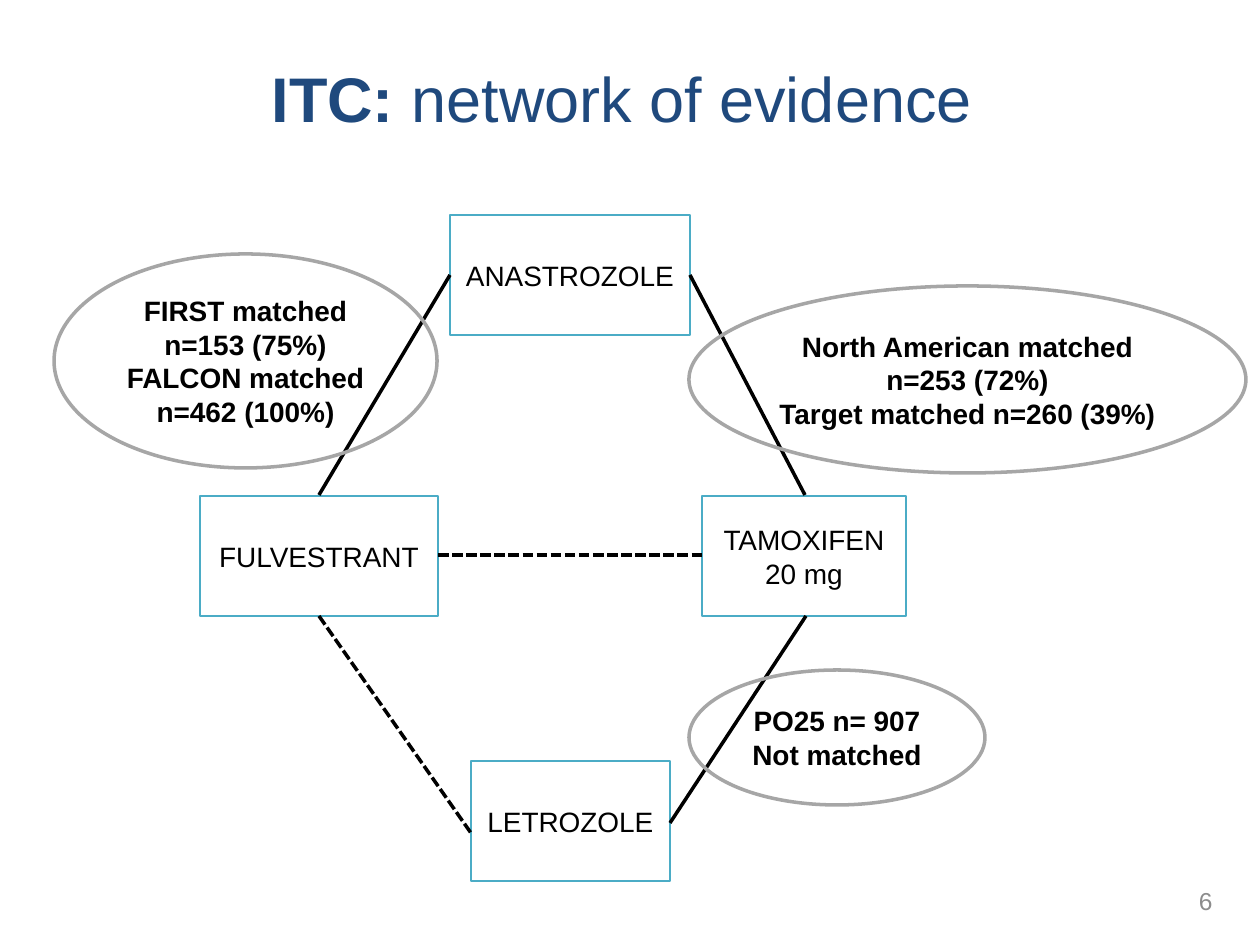
from dataclasses import dataclass

from lxml import etree
from pptx import Presentation
from pptx.dml.color import RGBColor
from pptx.enum.dml import MSO_LINE
from pptx.enum.shapes import MSO_CONNECTOR, MSO_SHAPE
from pptx.enum.text import MSO_ANCHOR, PP_ALIGN
from pptx.oxml.ns import qn
from pptx.util import Pt

BOX = MSO_SHAPE.FLOWCHART_PROCESS
ELLIPSE = MSO_SHAPE.OVAL
STRAIGHT = MSO_CONNECTOR.STRAIGHT
DASHED = MSO_LINE.SQUARE_DOT
MIDDLE = MSO_ANCHOR.MIDDLE
CENTER, RIGHT = PP_ALIGN.CENTER, PP_ALIGN.RIGHT

EMU_PER_PX = 914400 / 126
TITLE_ONLY = 5


@dataclass(frozen=True)
class Theme:
    font: str = "Arial"
    title_color: str = "1F497D"
    text_color: str = "000000"
    number_color: str = "8C8C8C"
    box_line: str = "4BACC6"
    link_line: str = "000000"
    study_line: str = "A6A6A6"
    title_size: int = 36
    body_size: int = 16
    number_size: int = 14
    box_width: float = 1.5
    link_width: float = 2
    study_width: float = 2


THEME = Theme()

TREATMENTS = [
    ((450, 215, 240, 120), "ANASTROZOLE"),
    ((200, 496, 238, 120), "FULVESTRANT"),
    ((702, 496, 204, 120), "TAMOXIFEN\n20 mg"),
    ((471, 761, 199, 120), "LETROZOLE"),
]
DIRECT_LINKS = [
    ((690, 275), (805, 495)),
    ((319, 495), (450, 275)),
    ((670, 823), (806, 616)),
]
INDIRECT_LINKS = [
    ((438, 555), (703, 555)),
    ((319, 616), (471, 833)),
]
STUDIES = [
    ((54, 254, 383, 214), (0, 0),
     "FIRST matched n=153 (75%)\nFALCON matched n=462 (100%)"),
    ((689, 286, 557, 187), (5, 5),
     "North American matched n=253 (72%)\nTarget matched n=260 (39%)"),
    ((689, 670, 296, 135), (13, 6),
     "PO25 n= 907\nNot matched"),
]


def px(*lengths):
    return [round(length * EMU_PER_PX) for length in lengths]


def style_run(run, size, color, bold=False):
    run.font.name = THEME.font
    run.font.size = Pt(size)
    run.font.bold = bold
    run.font.color.rgb = RGBColor.from_string(color)


def style_line(line, color, width):
    line.color.rgb = RGBColor.from_string(color)
    line.width = Pt(width)


def write_text(frame, text, size, color, align, bold=False):
    frame.word_wrap = True
    frame.vertical_anchor = MIDDLE
    frame.text = text
    for paragraph in frame.paragraphs:
        paragraph.alignment = align
        for run in paragraph.runs:
            style_run(run, size, color, bold)


def add_title(slide, bounds, parts):
    title = slide.shapes.title
    title.left, title.top, title.width, title.height = px(*bounds)
    title.text_frame.vertical_anchor = MIDDLE
    heading = title.text_frame.paragraphs[0]
    heading.alignment = CENTER
    heading.line_spacing = 0.9
    for words, bold in parts:
        run = heading.add_run()
        run.text = words
        style_run(run, THEME.title_size, THEME.title_color, bold)


def add_page_number(slide, bounds, number):
    label = slide.shapes.add_textbox(*px(*bounds))
    write_text(label.text_frame, number, THEME.number_size,
               THEME.number_color, RIGHT)


def add_outlined(slide, preset, bounds, text, color, width, bold=False):
    outlined = slide.shapes.add_shape(preset, *px(*bounds))
    outlined.shadow.inherit = False
    outlined.fill.background()
    style_line(outlined.line, color, width)
    write_text(outlined.text_frame, text, THEME.body_size,
               THEME.text_color, CENTER, bold)
    return outlined


def add_treatment(slide, bounds, name):
    add_outlined(slide, BOX, bounds, name, THEME.box_line, THEME.box_width)


def add_study(slide, bounds, insets, findings):
    study = add_outlined(slide, ELLIPSE, bounds, findings,
                         THEME.study_line, THEME.study_width, bold=True)
    frame = study.text_frame
    side, edge = px(*insets)
    frame.margin_left = frame.margin_right = side
    frame.margin_top = frame.margin_bottom = edge


def add_link(slide, start, end, dash=None):
    link = slide.shapes.add_connector(STRAIGHT, *px(*start, *end))
    style_line(link.line, THEME.link_line, THEME.link_width)
    if dash:
        link.line.dash_style = dash
    etree.SubElement(link._element.spPr, qn("a:effectLst"))


def main():
    deck = Presentation()
    deck.slide_width, deck.slide_height = px(1260, 945)
    slide = deck.slides.add_slide(deck.slide_layouts[TITLE_ONLY])

    add_title(slide, (35, 37, 1191, 130),
              [("ITC: ", True), ("network of evidence ", False)])
    add_page_number(slide, (941, 876, 284, 50), "6")
    for bounds, name in TREATMENTS:
        add_treatment(slide, bounds, name)
    for start, end in DIRECT_LINKS:
        add_link(slide, start, end)
    for start, end in INDIRECT_LINKS:
        add_link(slide, start, end, DASHED)
    for bounds, insets, findings in STUDIES:
        add_study(slide, bounds, insets, findings)

    deck.save("out.pptx")


if __name__ == "__main__":
    main()
